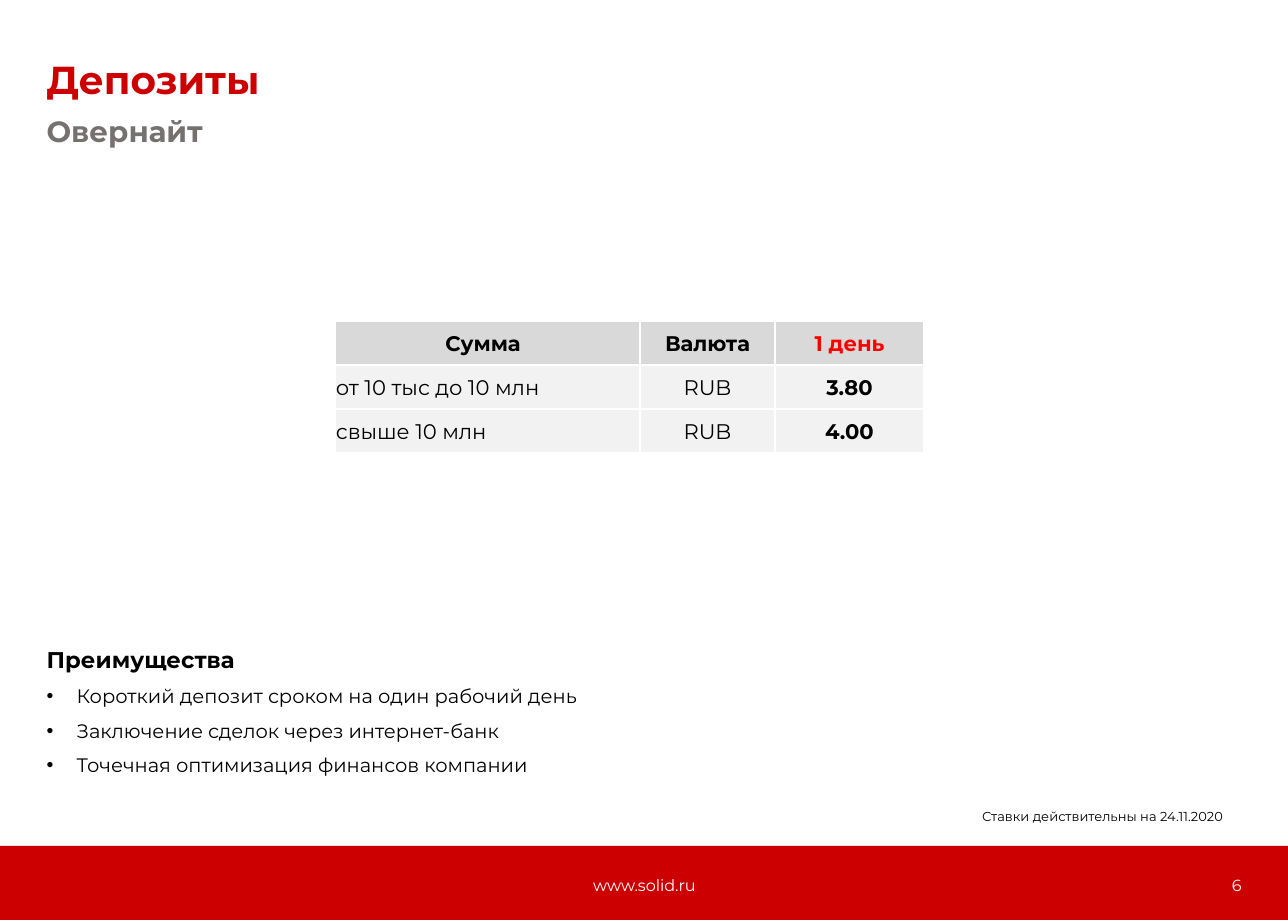
from lxml import etree
from pptx import Presentation
from pptx.dml.color import RGBColor
from pptx.enum.shapes import MSO_SHAPE
from pptx.enum.text import MSO_ANCHOR, MSO_AUTO_SIZE, PP_ALIGN
from pptx.oxml.ns import qn
from pptx.util import Emu, Pt

EMU_PER_PX = 7822
SLIDE_WIDTH, SLIDE_HEIGHT = 1288, 920
CONTENT_WITH_CAPTION = 7
FONT = "Montserrat"
COLOURS = {
    "brand": "CC0000",
    "subtitle": "767171",
    "text": "000000",
    "accent": "FF0000",
    "white": "FFFFFF",
    "header": "D9D9D9",
    "row": "F2F2F2",
}
LEFT, CENTER, RIGHT = PP_ALIGN.LEFT, PP_ALIGN.CENTER, PP_ALIGN.RIGHT
TOP, MIDDLE = MSO_ANCHOR.TOP, MSO_ANCHOR.MIDDLE
RECTANGLE = MSO_SHAPE.RECTANGLE
NO_AUTOFIT = MSO_AUTO_SIZE.NONE

RATES = [
    ("Сумма", "Валюта", "1 день"),
    ("от 10 тыс до 10 млн", "RUB", "3.80"),
    ("свыше 10 млн", "RUB", "4.00"),
]
COLUMN_WIDTHS = (305, 135, 149)
ROW_HEIGHT = 44
ADVANTAGES = [
    "Короткий депозит сроком на один рабочий день",
    "Заключение сделок через интернет-банк",
    "Точечная оптимизация финансов компании",
]


def px(length):
    return Emu(length * EMU_PER_PX)


def colour(name):
    return RGBColor.from_string(COLOURS[name])


def format_paragraph(paragraph, size, color="text", bold=False, align=LEFT,
                     before=0, line=0.9):
    paragraph.alignment = align
    paragraph.line_spacing = line
    paragraph.space_before = Pt(before)
    font = paragraph.font
    font.name, font.size, font.bold = FONT, Pt(size), bold
    font.color.rgb = colour(color)


def set_bullet(paragraph, indent, char=None):
    """Give the paragraph a hanging bullet, or none when char is missing."""
    properties = paragraph._p.get_or_add_pPr()
    properties.set("marL", str(px(indent)))
    properties.set("indent", str(px(-indent)))
    if char:
        etree.SubElement(properties, qn("a:buChar")).set("char", char)
    else:
        etree.SubElement(properties, qn("a:buNone"))


def place(shape, left, top, width, height, anchor=TOP):
    shape.left, shape.top = px(left), px(top)
    shape.width, shape.height = px(width), px(height)
    frame = shape.text_frame
    frame.word_wrap = True
    frame.auto_size = NO_AUTOFIT
    frame.vertical_anchor = anchor
    return frame


def fill_heading(placeholder, text, top, width, size, color):
    frame = place(placeholder, 35, top, width, 80)
    frame.text = text
    format_paragraph(frame.paragraphs[0], size, color, bold=True)


def fill_advantages(placeholder):
    frame = place(placeholder, 35, 643, 590, 198)
    heading = frame.paragraphs[0]
    heading.text = "Преимущества"
    set_bullet(heading, 0)
    format_paragraph(heading, 14, bold=True)
    for advantage in ADVANTAGES:
        item = frame.add_paragraph()
        item.text = advantage
        set_bullet(item, 30, "•")
        format_paragraph(item, 12, before=8.3)


def add_label(slide, text, box, size, color, align, anchor=MIDDLE):
    frame = place(slide.shapes.add_textbox(0, 0, 0, 0), *box, anchor)
    frame.text = text
    format_paragraph(frame.paragraphs[0], size, color, align=align)


def add_footer_bar(slide):
    bar = slide.shapes.add_shape(RECTANGLE, 0, px(846), px(SLIDE_WIDTH),
                                 px(SLIDE_HEIGHT - 846))
    bar.shadow.inherit = False
    bar.fill.solid()
    bar.fill.fore_color.rgb = colour("brand")
    bar.line.fill.background()


def set_borders(cell, color, width):
    properties = cell._tc.get_or_add_tcPr()
    for side in ("lnL", "lnR", "lnT", "lnB"):
        border = etree.SubElement(properties, qn(f"a:{side}"), w=str(Pt(width)))
        fill = etree.SubElement(border, qn("a:solidFill"))
        etree.SubElement(fill, qn("a:srgbClr"), val=COLOURS[color])


def fill_rate_cell(cell, text, row, column):
    is_header, is_amount, is_rate = row == 0, column == 0, column == 2
    set_borders(cell, "white", 1)
    cell.fill.solid()
    cell.fill.fore_color.rgb = colour("header" if is_header else "row")
    cell.vertical_anchor = MIDDLE
    cell.margin_left = cell.margin_top = px(1)
    cell.margin_right = px(10 if is_amount else 1)
    cell.margin_bottom = 0
    cell.text = text
    format_paragraph(
        cell.text_frame.paragraphs[0], 13,
        color="accent" if is_header and is_rate else "text",
        bold=is_header or is_rate,
        align=LEFT if is_amount and not is_header else CENTER,
        line=1.0,
    )


def add_rates_table(slide):
    table = slide.shapes.add_table(
        len(RATES), len(COLUMN_WIDTHS), px(335), px(321),
        px(sum(COLUMN_WIDTHS)), px(ROW_HEIGHT * len(RATES))).table
    for column, width in zip(table.columns, COLUMN_WIDTHS):
        column.width = px(width)
    for row, texts in enumerate(RATES):
        table.rows[row].height = px(ROW_HEIGHT)
        for column, text in enumerate(texts):
            fill_rate_cell(table.cell(row, column), text, row, column)


def main():
    deck = Presentation()
    deck.slide_width, deck.slide_height = px(SLIDE_WIDTH), px(SLIDE_HEIGHT)
    slide = deck.slides.add_slide(deck.slide_layouts[CONTENT_WITH_CAPTION])
    title, advantages, subtitle = slide.placeholders

    add_footer_bar(slide)
    fill_heading(title, "Депозиты", 55, 1217, 24, "brand")
    fill_heading(subtitle, "Овернайт", 111, 1189, 18, "subtitle")
    add_rates_table(slide)
    fill_advantages(advantages)
    add_label(slide, "Ставки действительны на 24.11.2020",
              (963, 805, 272, 34), 8, "text", RIGHT, TOP)
    add_label(slide, "www.solid.ru", (427, 862, 435, 49), 9.9, "white", CENTER)
    add_label(slide, "6", (963, 862, 290, 49), 9.9, "white", RIGHT)
    deck.save("out.pptx")


if __name__ == "__main__":
    main()
